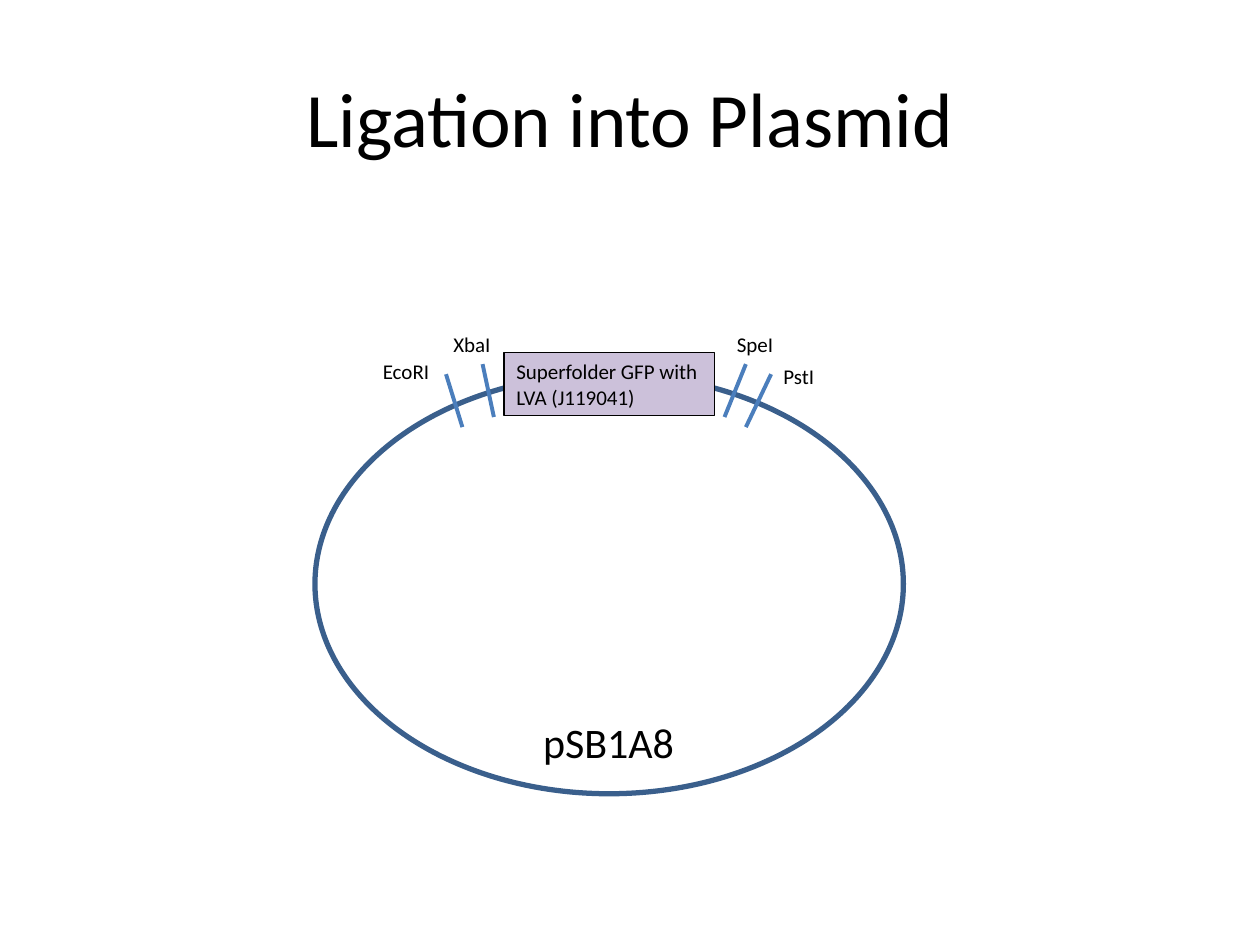
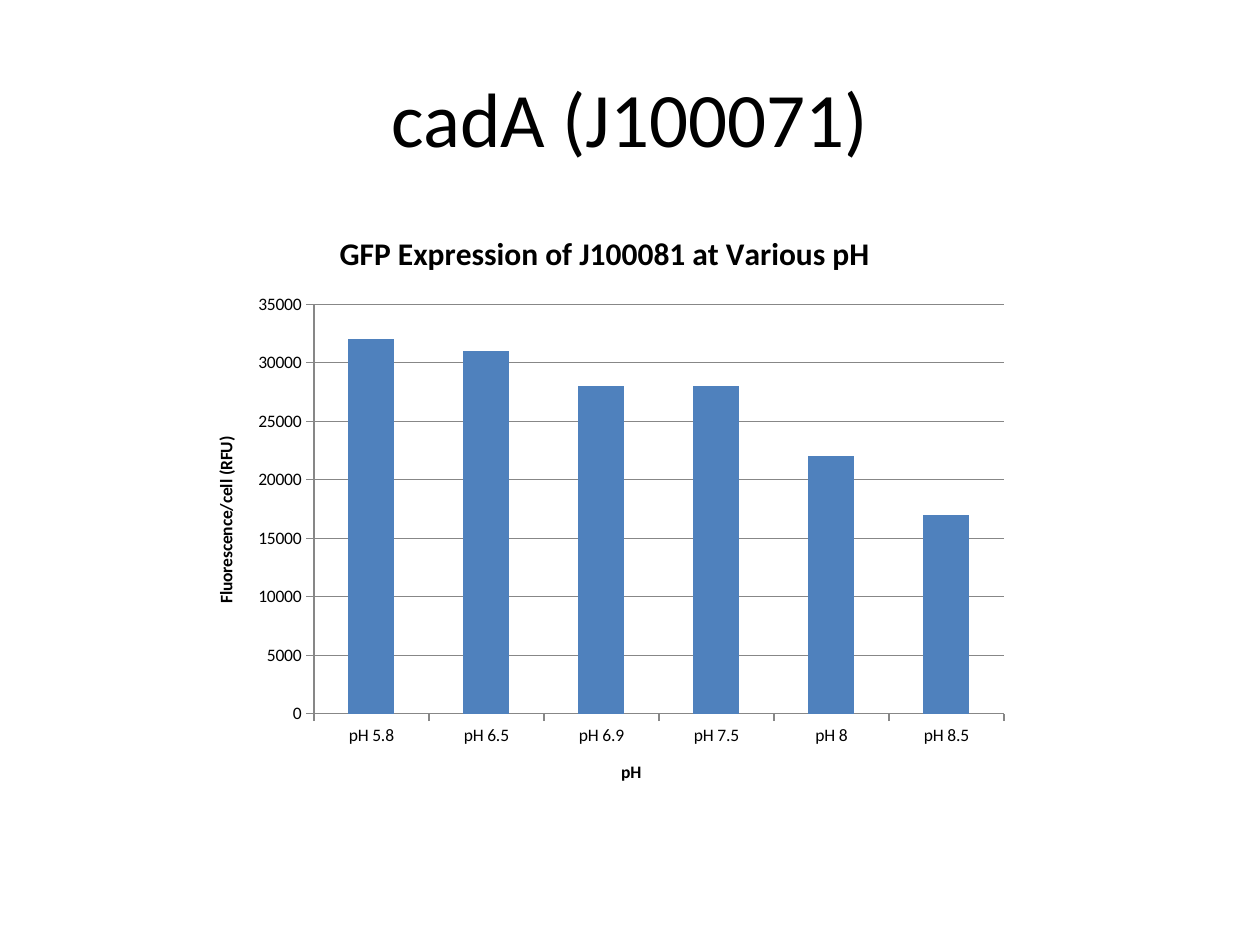
from dataclasses import dataclass

from lxml.etree import SubElement
from pptx import Presentation
from pptx.chart.data import CategoryChartData
from pptx.dml.color import RGBColor
from pptx.enum.chart import XL_CHART_TYPE, XL_TICK_MARK
from pptx.enum.shapes import MSO_CONNECTOR, MSO_SHAPE
from pptx.enum.text import MSO_ANCHOR, MSO_AUTO_SIZE, PP_ALIGN
from pptx.oxml.ns import qn
from pptx.util import Inches, Pt


@dataclass(frozen=True)
class Theme:
    font: str = "Calibri"
    ink: str = "000000"
    paper: str = "FFFFFF"
    ring: str = "3A5F8C"
    cut: str = "4B7EBC"
    gene: str = "CCC1DA"
    bar: str = "4F81BD"
    grid: str = "878787"
    head: int = 44
    name: int = 24
    chart: int = 18
    label: int = 12
    tick: int = 10


def color(code):
    return RGBColor.from_string(code)


def box(*sides):
    return [Inches(side) for side in sides]


class Deck:
    def __init__(self, theme):
        self.theme = theme
        self.prs = Presentation()
        self.prs.slide_width, self.prs.slide_height = box(10, 7.5)
        self.slide = None
        self.group = None

    def style(self, font, size, bold=False):
        font.name = self.theme.font
        font.size = Pt(size)
        font.bold = bold
        font.color.rgb = color(self.theme.ink)

    def letter(self, frame, text, size, align=PP_ALIGN.LEFT, anchor=MSO_ANCHOR.TOP):
        frame.text = text
        frame.word_wrap = True
        frame.vertical_anchor = anchor
        para = frame.paragraphs[0]
        para.alignment = align
        self.style(para.runs[0].font, size)

    def outline(self, line, code, width):
        line.color.rgb = color(code)
        line.width = Pt(width)

    def page(self, title):
        self.slide = self.prs.slides.add_slide(self.prs.slide_layouts[5])
        fill = self.slide.background.fill
        fill.solid()
        fill.fore_color.rgb = color(self.theme.paper)
        head = self.slide.shapes.title
        head.left, head.top, head.width, head.height = box(0.5, 0.3, 9, 1.25)
        self.letter(head.text_frame, title, self.theme.head,
                    PP_ALIGN.CENTER, MSO_ANCHOR.MIDDLE)

    def start_group(self):
        self.group = self.slide.shapes.add_group_shape().shapes

    def shape(self, kind, place, fill, line, width):
        shape = self.group.add_shape(kind, *box(*place))
        shape.shadow.inherit = False
        shape.fill.solid()
        shape.fill.fore_color.rgb = color(fill)
        self.outline(shape.line, line, width)
        return shape

    def text(self, text, place, size, align=PP_ALIGN.LEFT):
        frame = self.group.add_textbox(*box(*place)).text_frame
        self.letter(frame, text, size, align)
        frame.auto_size = MSO_AUTO_SIZE.SHAPE_TO_FIT_TEXT

    def line(self, ends, code, width):
        line = self.group.add_connector(MSO_CONNECTOR.STRAIGHT, *box(*ends))
        self.outline(line.line, code, width)
        SubElement(line._element.spPr, qn("a:effectLst"))

    def caption(self, owner, text, size):
        frame = owner.text_frame
        frame.text = text
        self.style(frame.paragraphs[0].runs[0].font, size, True)

    def axis(self, axis, title):
        self.caption(axis.axis_title, title, self.theme.tick)
        axis.major_tick_mark = XL_TICK_MARK.OUTSIDE
        axis.minor_tick_mark = XL_TICK_MARK.NONE
        self.outline(axis.format.line, self.theme.grid, 0.75)

    def columns(self, place, title, names, series, cats, values):
        data = CategoryChartData()
        data.categories = cats
        data.add_series(series, values)
        chart = self.slide.shapes.add_chart(
            XL_CHART_TYPE.COLUMN_CLUSTERED, *box(*place), data).chart
        self.style(chart.font, self.theme.tick)
        chart.has_legend = False
        self.caption(chart.chart_title, title, self.theme.chart)
        chart.chart_title.include_in_layout = False
        for axis, name in zip((chart.category_axis, chart.value_axis), names):
            self.axis(axis, name)
        chart.value_axis.has_major_gridlines = True
        self.outline(chart.value_axis.major_gridlines.format.line,
                     self.theme.grid, 0.75)
        plot = chart.plots[0]
        plot.gap_width = 150
        plot.vary_by_categories = False
        fill = plot.series[0].format.fill
        fill.solid()
        fill.fore_color.rgb = color(self.theme.bar)


def plasmid(deck):
    theme = deck.theme
    deck.page("Ligation into Plasmid")
    deck.start_group()

    # Plasmid ring with the inserted gene
    deck.shape(MSO_SHAPE.OVAL, (2.5, 2.97, 4.67, 3.33), theme.paper, theme.ring, 3)
    gene = deck.shape(MSO_SHAPE.RECTANGLE, (4, 2.8, 1.67, 0.5),
                      theme.gene, theme.ink, 0.75)
    deck.letter(gene.text_frame, "Superfolder GFP with LVA (J119041)", theme.label)
    deck.text("pSB1A8", (3.54, 5.64, 2.58, 0.5), theme.name, PP_ALIGN.CENTER)

    # Cut sites: name, label corner, cut top, cut foot x
    sites = [
        ("EcoRI", 2.94, 2.8, 3.54, 2.97, 3.67),
        ("XbaI", 3.5, 2.58, 3.83, 2.89, 3.92),
        ("SpeI", 5.75, 2.58, 5.92, 2.89, 5.75),
        ("PstI", 6.12, 2.84, 6.12, 2.97, 5.92),
    ]
    for name, left, top, x, y, foot in sites:
        deck.line((x, y, foot, y + 0.42), theme.cut, 2.25)
        deck.text(name, (left, top, 0.67, 0.3), theme.label)


def results(deck):
    deck.page("cadA (J100071)")
    # Fluorescence by pH
    deck.columns(
        (1.5, 1.64, 6.6, 4.78),
        "GFP Expression of J100081 at Various pH",
        ("pH", "Fluorescence/cell (RFU)"),
        "Series 1",
        ["pH 5.8", "pH 6.5", "pH 6.9", "pH 7.5", "pH 8", "pH 8.5"],
        [32000, 31000, 28000, 28000, 22000, 17000],
    )


def main():
    deck = Deck(Theme())
    plasmid(deck)
    results(deck)
    deck.prs.save("out.pptx")


if __name__ == "__main__":
    main()
